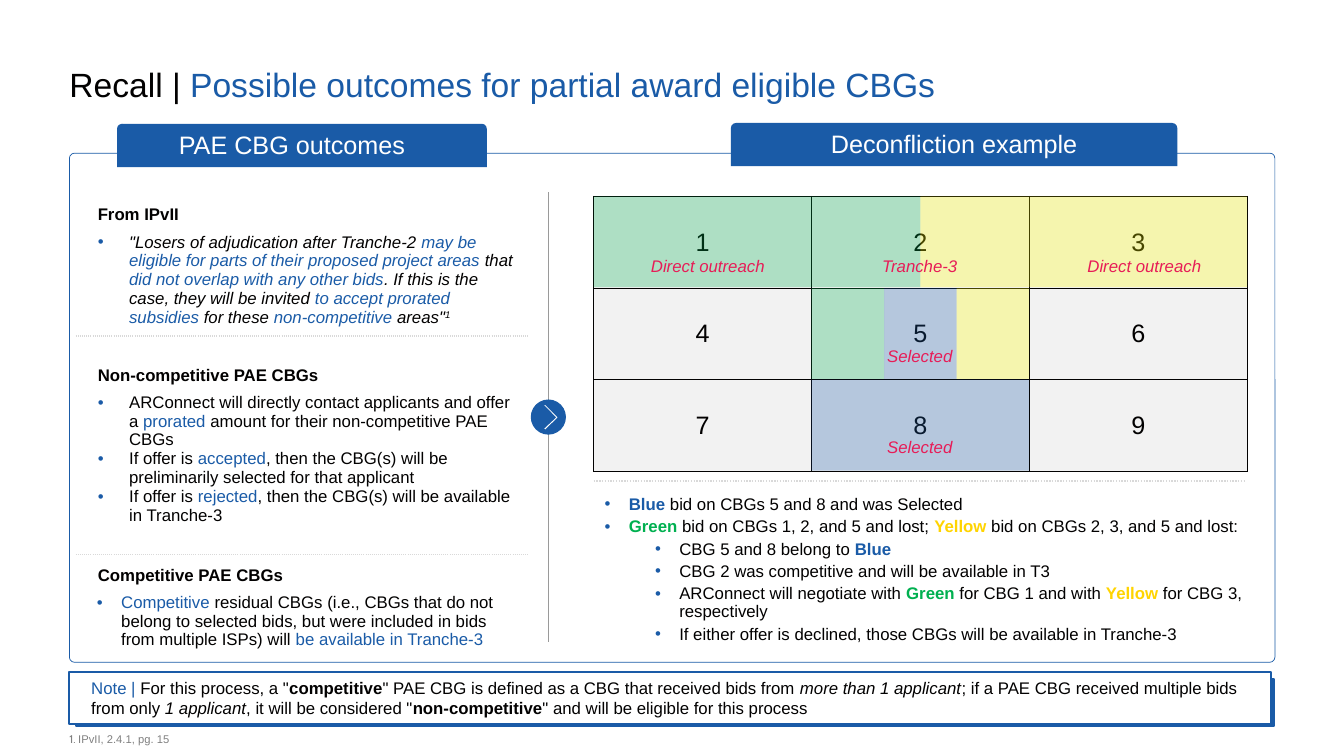
from lxml.etree import SubElement
from pptx import Presentation
from pptx.dml.color import RGBColor
from pptx.enum.dml import MSO_LINE
from pptx.enum.shapes import MSO_CONNECTOR, MSO_SHAPE
from pptx.enum.text import MSO_ANCHOR, PP_ALIGN
from pptx.oxml import parse_xml
from pptx.oxml.ns import nsdecls, qn
from pptx.util import Cm, Pt

BLUE, GREEN, YELLOW, INK = "1A5BA7", "00B050", "FFFF00", "020101"
WHITE, PALE, GREY, PINK = "FFFFFF", "F2F2F2", "D9D9D9", "E71C57"
RUN_COLOURS = {"blue": BLUE, "green": GREEN, "gold": "FFD400"}
GRID_LEFT, GRID_TOP, GRID_WIDTH, GRID_HEIGHT = 14.96, 4.95, 5.49, 2.31
MARGIN = 1.75

HEADING = {"indent": (0.3, 0), "space_after": Pt(6)}
QUOTE = {"indent": (1.09, -0.79), "bullet": True, "space_after": Pt(6)}
OFFER = {"indent": (1.09, -0.79), "bullet": True}
RESIDUAL = {"indent": (0.89, -0.61), "bullet": True, "space_after": Pt(6)}
BID = {"indent": (0.89, -0.61), "bullet": True, "space_after": Pt(3), "line_spacing": 0.9}
RESULT = {**BID, "indent": (2.16, -0.61)}
CENTRED = {"alignment": PP_ALIGN.CENTER}

OUTCOMES = [
    (3.51, [
        (HEADING, [("From IPvII", "bold")]),
        (QUOTE, [
            ('"Losers of adjudication after Tranche-2 ', "italic"),
            ("may be eligible for parts of their proposed project areas ", "italic blue"),
            ("that ", "italic"),
            ("did not overlap with any other bids", "italic blue"),
            (". If this is the case, they will be invited ", "italic"),
            ("to accept prorated subsidies ", "italic blue"),
            ("for these ", "italic"),
            ("non-competitive ", "italic blue"),
            ('areas"', "italic"),
            ("1", "italic superscript"),
        ]),
    ]),
    (5.51, [
        (HEADING, [("Non-competitive PAE CBGs", "bold")]),
        (OFFER, [("ARConnect will directly contact applicants and offer a ", ""),
                 ("prorated", "blue"),
                 (" amount for their non-competitive PAE CBGs", "")]),
        (OFFER, [("If offer is ", ""), ("accepted", "blue"),
                 (", then the CBG(s) will be preliminarily selected for that applicant", "")]),
        (OFFER, [("If offer is ", ""), ("rejected", "blue"),
                 (", then the CBG(s) will be available in Tranche-3", "")]),
    ]),
    (2.67, [
        (HEADING, [("Competitive PAE CBGs", "bold")]),
        (RESIDUAL, [
            ("Competitive", "blue"),
            (" residual CBGs (i.e., CBGs that do not belong to selected bids, but were "
             "included in bids from multiple ISPs) will ", ""),
            ("be available in Tranche-3", "blue"),
        ]),
    ]),
]
BIDS = [
    (BID, [("Blue", "blue bold"), (" bid on CBGs 5 and 8 and was Selected", "")]),
    (BID, [("Green", "green bold"), (" bid on CBGs 1, 2, and 5 and lost; ", ""),
           ("Yellow", "gold bold"), (" bid on CBGs 2, 3, and 5 and lost:", "")]),
    (RESULT, [("CBG 5 and 8 belong to ", ""), ("Blue", "blue bold")]),
    (RESULT, [("CBG 2 was competitive and will be available in T3", "")]),
    (RESULT, [("ARConnect will negotiate with ", ""), ("Green", "green bold"),
              (" for CBG 1 and with ", ""), ("Yellow", "gold bold"),
              (" for CBG 3, respectively", "")]),
    (RESULT, [("If either offer is declined, those CBGs will be available in Tranche-3", "")]),
]
NOTE = [({"indent": (0.3, 0)}, [
    ("Note |", "blue"), (' For this process, a "', ""), ("competitive", "bold"),
    ('" PAE CBG is defined as a CBG that received bids from ', ""),
    ("more than 1 applicant", "italic"),
    ("; if a PAE CBG received multiple bids from only ", ""), ("1 applicant", "italic"),
    (', it will be considered "', ""), ("non-competitive", "bold"),
    ('" and will be eligible for this process', ""),
])]
BID_AREAS = [
    (0, 0, 1, GREEN), (0, 2, 1, YELLOW), (2, 1, 1, BLUE),
    (0, 1, 1 / 2, GREEN), (0, 3 / 2, 1 / 2, YELLOW),
    (1, 1, 1 / 3, GREEN), (1, 4 / 3, 1 / 3, BLUE), (1, 5 / 3, 1 / 3, YELLOW),
]
LABELS = [
    ("Direct outreach", 15.95, 6.5), ("Direct outreach", 26.95, 6.5),
    ("Tranche-3", 21.29, 6.5), ("Selected", 21.29, 8.76), ("Selected", 21.29, 11.05),
]
ARROW_HEAD = [(13.74, 10.82), (13.72, 10.8), (14.02, 10.52),
              (13.72, 10.21), (13.74, 10.21), (14.05, 10.52)]


def colour(value):
    return RGBColor.from_string(value)


def set_values(target, values):
    for name, value in values.items():
        setattr(target, name, value)


def place(*lengths):
    return [Cm(length) for length in lengths]


def add_bullet(properties):
    for tag, name, value in (("a:buFont", "typeface", "Arial"), ("a:buChar", "char", "•")):
        SubElement(properties, qn(tag)).set(name, value)
    properties.insert(0, parse_xml(
        f'<a:buClr {nsdecls("a")}><a:srgbClr val="{BLUE}"/></a:buClr>'))


def write(frame, paragraphs, size=12, ink=INK):
    for number, (layout, runs) in enumerate(paragraphs):
        paragraph = frame.add_paragraph() if number else frame.paragraphs[0]
        values = dict(layout)
        properties = paragraph._p.get_or_add_pPr()
        left, hanging = values.pop("indent", (0, 0))
        properties.set("marL", str(Cm(left)))
        properties.set("indent", str(Cm(hanging)))
        if values.pop("bullet", False):
            add_bullet(properties)
        set_values(paragraph, {"alignment": PP_ALIGN.LEFT, **values})
        for text, style in runs:
            words = style.split()
            run = paragraph.add_run()
            run.text = text
            set_values(run.font, {"name": "Cabin" if "cabin" in words else "Arial",
                                  "size": Pt(size), "bold": "bold" in words,
                                  "italic": "italic" in words})
            shades = [RUN_COLOURS[word] for word in words if word in RUN_COLOURS]
            run.font.color.rgb = colour(shades[0] if shades else ink)
            if "superscript" in words:
                run._r.get_or_add_rPr().set("baseline", "30000")


def set_frame(frame, anchor, margins):
    sides = ("margin_left", "margin_top", "margin_right", "margin_bottom")
    set_values(frame, {"word_wrap": True, "vertical_anchor": anchor,
                       **dict(zip(sides, place(*margins)))})


def paint(shape, fill=None, line=None, width=0.75):
    shape.shadow.inherit = False
    if fill:
        shape.fill.solid()
        shape.fill.fore_color.rgb = colour(fill)
    else:
        shape.fill.background()
    if line:
        shape.line.color.rgb = colour(line)
        shape.line.width = Pt(width)
    else:
        shape.line.fill.background()


def add_panel(slide, kind, bounds, fill=None, line=None, width=0.75, adjustments=()):
    shape = slide.shapes.add_shape(kind, *place(*bounds))
    for number, value in enumerate(adjustments):
        shape.adjustments[number] = value
    paint(shape, fill, line, width)
    return shape


def add_text(slide, bounds, paragraphs, size=12, ink=INK,
             anchor=MSO_ANCHOR.MIDDLE, margins=(0, 0, 0, 0)):
    frame = slide.shapes.add_textbox(*place(*bounds)).text_frame
    set_frame(frame, anchor, margins)
    write(frame, paragraphs, size, ink)


def add_tab(slide, bounds, text, alignment, inset):
    tab = add_panel(slide, MSO_SHAPE.ROUND_2_SAME_RECTANGLE, bounds, BLUE, adjustments=(0.117, 0))
    set_frame(tab.text_frame, MSO_ANCHOR.MIDDLE, (inset, 0, 0, 0))
    write(tab.text_frame, [({"alignment": alignment, "line_spacing": 0.95}, [(text, "")])], 18, WHITE)


def add_line(slide, ends, shade, width, dash=None):
    line = slide.shapes.add_connector(MSO_CONNECTOR.STRAIGHT, *place(*ends))
    line.line.color.rgb = colour(shade)
    set_values(line.line, {"width": Pt(width), "dash_style": dash})
    SubElement(line._element.spPr, qn("a:effectLst"))


def set_borders(cell, shades, dash):
    properties = cell._tc.get_or_add_tcPr()
    for side, shade in zip("LRTB", shades):
        fill = f'<a:solidFill><a:srgbClr val="{shade}"/></a:solidFill>' if shade else "<a:noFill/>"
        properties.append(parse_xml(
            f'<a:ln{side} {nsdecls("a")} w="12700">{fill}<a:prstDash val="{dash}"/></a:ln{side}>'))


def add_grid(slide, left, top, widths, heights):
    table = slide.shapes.add_table(len(heights), len(widths),
                                   *place(left, top, sum(widths), sum(heights))).table
    set_values(table, {"first_row": False, "horz_banding": False})
    for column, width in zip(table.columns, widths):
        column.width = Cm(width)
    for row, height in zip(table.rows, heights):
        row.height = Cm(height)
    return table


def add_outcomes(slide):
    table = add_grid(slide, 1.91, GRID_TOP, [11.4], [height for height, _ in OUTCOMES])
    for number, (_, paragraphs) in enumerate(OUTCOMES):
        cell = table.cell(number, 0)
        upper = GREY if number else None
        lower = GREY if number < len(OUTCOMES) - 1 else None
        set_borders(cell, (None, None, upper, lower), "sysDot")
        cell.fill.background()
        cell.vertical_anchor = MSO_ANCHOR.MIDDLE
        write(cell.text_frame, paragraphs)


def add_example(slide):
    table = add_grid(slide, GRID_LEFT, GRID_TOP, [GRID_WIDTH] * 3, [GRID_HEIGHT] * 3)
    for number, cell in enumerate(table.iter_cells(), 1):
        set_borders(cell, [INK] * 4, "solid")
        cell.fill.solid()
        cell.fill.fore_color.rgb = colour(PALE)
        cell.vertical_anchor = MSO_ANCHOR.MIDDLE
        write(cell.text_frame, [(CENTRED, [(str(number), "")])], 18)
    for row, column, share, shade in BID_AREAS:
        bounds = (GRID_LEFT + column * GRID_WIDTH, GRID_TOP + row * GRID_HEIGHT,
                  share * GRID_WIDTH, GRID_HEIGHT - 0.02)
        area = add_panel(slide, MSO_SHAPE.RECTANGLE, bounds, shade)
        tint = area._element.spPr.find(qn("a:solidFill"))[0]
        SubElement(tint, qn("a:alpha")).set("val", "28000")
    add_line(slide, (GRID_LEFT, 12.12, 31.39, 12.12), GREY, 1, MSO_LINE.ROUND_DOT)
    for text, left, top in LABELS:
        add_text(slide, (left, top, 3.78, 0.41), [(CENTRED, [(text, "italic")])], ink=PINK)


def add_divider(slide):
    add_line(slide, (13.82, 4.85, 13.82, 16.18), "9A9A9A", 0.75)
    add_panel(slide, MSO_SHAPE.OVAL, (13.39, 10.08, 0.86, 0.86), BLUE, BLUE)
    start, *others = [tuple(place(*point)) for point in ARROW_HEAD]
    builder = slide.shapes.build_freeform(*start)
    builder.add_line_segments(others)
    paint(builder.convert_to_shape(), WHITE)


def add_note(slide):
    add_panel(slide, MSO_SHAPE.RECTANGLE, (1.91, 17.12, 30.2, 1.17), BLUE, BLUE, 1.5)
    note = add_panel(slide, MSO_SHAPE.RECTANGLE, (MARGIN, 16.94, 30.28, 1.3), WHITE, BLUE, 1.5)
    set_frame(note.text_frame, MSO_ANCHOR.MIDDLE, (0.25, 0.13, 0.25, 0.13))
    write(note.text_frame, NOTE)


def main():
    presentation = Presentation()
    set_values(presentation, {"slide_width": Cm(33.87), "slide_height": Cm(19.05)})
    slide = presentation.slides.add_slide(presentation.slide_layouts[6])
    title = [("Recall | ", ""), ("Possible outcomes for partial award eligible CBGs", "blue")]
    add_text(slide, (MARGIN, 1.73, 30.38, 0.91), [({"line_spacing": 0.9}, title)],
             24, anchor=MSO_ANCHOR.TOP)
    add_divider(slide)
    add_panel(slide, MSO_SHAPE.ROUNDED_RECTANGLE, (MARGIN, 3.86, 30.38, 12.83),
              line=BLUE, width=0.5, adjustments=(0.01,))
    add_tab(slide, (2.95, 3.12, 9.32, 1.09), "PAE CBG outcomes", PP_ALIGN.LEFT, 1.52)
    add_tab(slide, (18.42, 3.1, 11.25, 1.09), "Deconfliction example", PP_ALIGN.CENTER, 0)
    add_outcomes(slide)
    add_text(slide, (GRID_LEFT, 12.34, 16.46, 4.04), BIDS)
    add_example(slide)
    add_note(slide)
    footnote = [("1. ", "cabin"), ("IPvII, 2.4.1, pg. 15", "")]
    add_text(slide, (MARGIN, 18.49, 30.78, 0.3), [({"line_spacing": 0.9}, footnote)],
             8, "808080", MSO_ANCHOR.BOTTOM)
    presentation.save("out.pptx")


if __name__ == "__main__":
    main()
